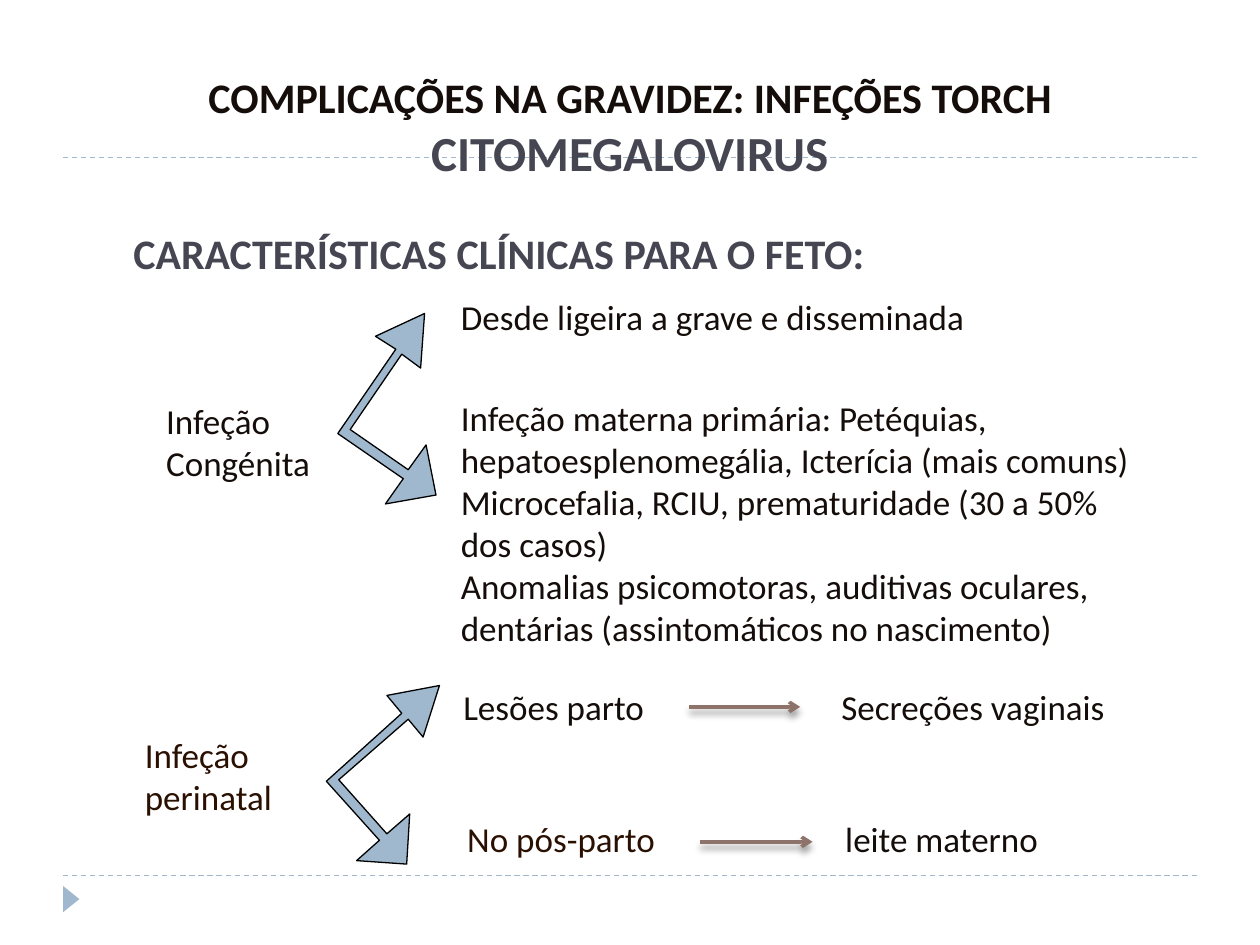
from lxml.etree import SubElement
from pptx import Presentation
from pptx.dml.color import RGBColor
from pptx.enum.dml import MSO_LINE_DASH_STYLE as Dash
from pptx.enum.shapes import MSO_CONNECTOR as Connector, MSO_SHAPE as Shape
from pptx.enum.text import MSO_ANCHOR as Anchor, PP_ALIGN as Align
from pptx.oxml.ns import qn
from pptx.util import Cm, Pt

COLORS = {"ink": "140D0A", "brown": "2A1000", "heading": "464653",
          "blue": "9FB8CD", "arrow": "8E736A", "black": "000000"}
BODY = {"size": Pt(20), "bold": False}
HEADING = {"size": Pt(24), "bold": True}
SUBTITLE = {"size": Pt(28), "bold": True}
TAB_STOPS = [5.08, 7.62]

TEXTS = [
    ((1.3, 1.32, 22.81, 2.49), Align.CENTER, True, [
        [("COMPLICAÇÕES NA GRAVIDEZ: INFEÇÕES TORCH", "ink", HEADING)],
        [("CITOMEGALOVIRUS", "heading", SUBTITLE)]]),
    ((2.44, 4.47, 15.85, 1.32), Align.LEFT, True, [
        [("CARACTERÍSTICAS CLÍNICAS PARA O FETO:", "heading", HEADING)]]),
    ((3.1, 7.92, 3.81, 1.96), Align.JUSTIFY, True, [
        [("Infeção Congénita", "ink", BODY)]]),
    ((9.04, 5.84, 11.4, 1.09), Align.JUSTIFY, True, [
        [("Desde ligeira a grave e disseminada", "ink", BODY)]]),
    ((9.04, 7.87, 14.2, 5.38), Align.LEFT, True, [
        [("Infeção materna primária: Petéquias, hepatoesplenomegália, "
          "Icterícia (mais comuns)", "ink", BODY)],
        [("Microcefalia, RCIU, prematuridade (30 a 50% dos casos)", "ink", BODY)],
        [("Anomalias psicomotoras, auditivas oculares, dentárias "
          "(assintomáticos no nascimento)", "ink", BODY)]]),
    ((9.09, 13.69, 16.38, 1.12), Align.LEFT, True, [
        [("Lesões parto \t\tSecreções vaginais", "ink", BODY)]]),
    ((9.17, 16.36, 12.14, 1.96), Align.LEFT, True, [
        [("No pós-parto\t\t", "brown", BODY), ("leite materno", "ink", BODY)]]),
    ((2.67, 14.66, 3.48, 1.96), Align.LEFT, True, [
        [("Infeção perinatal", "brown", BODY)]]),
]
RULE_HEIGHTS = [17.65, 3.18]
CAUSE_ARROWS = [(13.89, 16.13, 14.25), (14.12, 16.38, 16.97)]
FORKED_ARROWS = [
    [(8.79, 9.98), (8.59, 8.97), (8.23, 9.47), (7.06, 8.66), (8.1, 7.14),
     (8.48, 7.42), (8.56, 6.32), (7.57, 6.78), (7.98, 7.04), (6.81, 8.74),
     (8.13, 9.65), (7.77, 10.16)],
    [(8.2, 17.42), (8.26, 16.41), (7.8, 16.81), (6.83, 15.72), (8.23, 14.5),
     (8.53, 14.86), (8.86, 13.82), (7.8, 14.02), (8.1, 14.38), (6.58, 15.75),
     (7.65, 16.94), (7.19, 17.35)],
]


def color(name):
    return RGBColor.from_string(COLORS[name])


def add_line(slide, left, right, height, line_color, width):
    line = slide.shapes.add_connector(
        Connector.STRAIGHT, Cm(left), Cm(height), Cm(right), Cm(height))
    line.line.color.rgb = color(line_color)
    line.line.width = Pt(width)
    effects = SubElement(line._element.spPr, qn("a:effectLst"))
    return line, effects


def add_rule(slide, height):
    rule, _ = add_line(slide, 1.27, 24.13, height, "blue", 0.75)
    rule.line.dash_style = Dash.DASH


def add_cause_arrow(slide, left, right, height):
    arrow, effects = add_line(slide, left, right, height, "arrow", 2)
    SubElement(arrow.line._get_or_add_ln(), qn("a:tailEnd"), type="arrow")
    shadow = SubElement(effects, qn("a:outerShdw"), blurRad=str(Pt(4)),
                        dist=str(Pt(3.4)), dir="5400000", rotWithShape="0")
    shade = SubElement(shadow, qn("a:srgbClr"), val=COLORS["black"])
    SubElement(shade, qn("a:alpha"), val="40000")


def paint(shape):
    shape.shadow.inherit = False
    shape.fill.solid()
    shape.fill.fore_color.rgb = color("blue")


def add_forked_arrow(slide, points):
    start, *others = [(Cm(x), Cm(y)) for x, y in points]
    builder = slide.shapes.build_freeform(*start)
    builder.add_line_segments(others, close=True)
    shape = builder.convert_to_shape()
    paint(shape)
    shape.line.color.rgb = color("black")
    shape.line.width = Pt(0.75)


def add_tab_stops(paragraph):
    tabs = SubElement(paragraph._p.get_or_add_pPr(), qn("a:tabLst"))
    for position in TAB_STOPS:
        SubElement(tabs, qn("a:tab"), pos=str(Cm(position)), algn="l")


def add_text(slide, box, alignment, wrap, paragraphs):
    frame = slide.shapes.add_textbox(*map(Cm, box)).text_frame
    frame.word_wrap = wrap
    frame.vertical_anchor = Anchor.TOP
    for index, runs in enumerate(paragraphs):
        paragraph = frame.add_paragraph() if index else frame.paragraphs[0]
        paragraph.alignment = alignment
        if any("\t" in text for text, _, _ in runs):
            add_tab_stops(paragraph)
        for text, run_color, style in runs:
            run = paragraph.add_run()
            run.text = text
            run.font.color.rgb = color(run_color)
            for name, value in {"name": "Calibri", **style}.items():
                setattr(run.font, name, value)


def main():
    presentation = Presentation()
    presentation.slide_width, presentation.slide_height = Cm(25.4), Cm(19.05)
    slide = presentation.slides.add_slide(presentation.slide_layouts[6])
    for height in RULE_HEIGHTS:
        add_rule(slide, height)
    marker = slide.shapes.add_shape(
        Shape.ISOSCELES_TRIANGLE, Cm(1.17), Cm(17.96), Cm(0.53), Cm(0.33))
    marker.rotation = 90
    paint(marker)
    marker.line.fill.background()
    for text in TEXTS:
        add_text(slide, *text)
    for arrow in CAUSE_ARROWS:
        add_cause_arrow(slide, *arrow)
    for points in FORKED_ARROWS:
        add_forked_arrow(slide, points)
    presentation.save("out.pptx")


if __name__ == "__main__":
    main()
